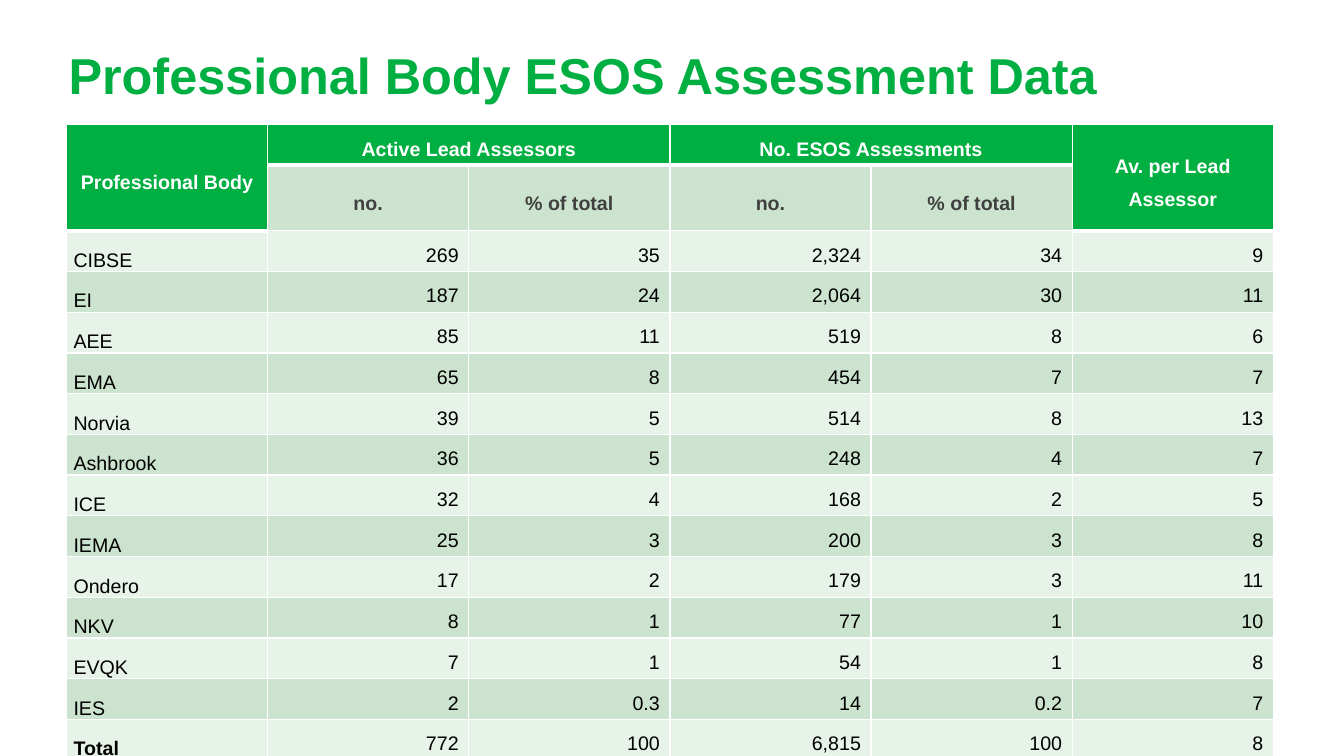
from lxml.etree import SubElement
from pptx import Presentation
from pptx.dml.color import RGBColor
from pptx.enum.text import MSO_ANCHOR as ANCHOR, MSO_AUTO_SIZE as AUTO_SIZE, PP_ALIGN as ALIGN
from pptx.oxml.ns import qn
from pptx.util import Inches, Pt

COLORS = {
    "green": "00AF41", "mid": "CCE3CF", "pale": "E7F2E9",
    "white": "FFFFFF", "grey": "404040", "black": "000000",
}
HEADERS = [
    ["Professional Body", "Active Lead Assessors", "", "No. ESOS Assessments", "",
     "Av. per Lead Assessor"],
    ["", "no.", "% of total", "no.", "% of total", ""],
]
BODIES = [
    ["CIBSE", "269", "35", "2,324", "34", "9"],
    ["EI", "187", "24", "2,064", "30", "11"],
    ["AEE", "85", "11", "519", "8", "6"],
    ["EMA", "65", "8", "454", "7", "7"],
    ["Norvia", "39", "5", "514", "8", "13"],
    ["Ashbrook", "36", "5", "248", "4", "7"],
    ["ICE", "32", "4", "168", "2", "5"],
    ["IEMA", "25", "3", "200", "3", "8"],
    ["Ondero", "17", "2", "179", "3", "11"],
    ["NKV", "8", "1", "77", "1", "10"],
    ["EVQK", "7", "1", "54", "1", "8"],
    ["IES", "2", "0.3", "14", "0.2", "7"],
    ["Total", "772", "100", "6,815", "100", "8"],
]


def add_run(paragraph, text, size, color, bold):
    run = paragraph.add_run()
    run.text = text
    run.font.name = "Arial"
    run.font.size = Pt(size)
    run.font.bold = bold
    run.font.color.rgb = RGBColor.from_string(COLORS[color])


def set_borders(cell, top, bottom):
    properties = cell._tc.get_or_add_tcPr()
    for side, width in (("L", 1), ("R", 1), ("T", top), ("B", bottom)):
        line = SubElement(properties, qn(f"a:ln{side}"), w=str(Pt(width)))
        fill = SubElement(line, qn("a:solidFill"))
        SubElement(fill, qn("a:srgbClr"), val=COLORS["white"])


prs = Presentation()
prs.slide_width, prs.slide_height = Inches(13.33), Inches(7.5)
slide = prs.slides.add_slide(prs.slide_layouts[5])

# Title
title = slide.shapes.title
title.left, title.top = Inches(0.68), Inches(0.51)
title.width, title.height = Inches(11.97), Inches(1.04)
heading = title.text_frame
heading.margin_left = heading.margin_right = heading.margin_top = heading.margin_bottom = 0
heading.word_wrap = True
heading.auto_size = AUTO_SIZE.NONE
heading.vertical_anchor = ANCHOR.TOP
heading_line = heading.paragraphs[0]
heading_line.alignment = ALIGN.LEFT
heading_line.line_spacing = 0.9
indent = Inches(0.81)
heading_line._p.get_or_add_pPr().set("marL", str(indent))
heading_line._p.get_or_add_pPr().set("indent", str(-indent))
add_run(heading_line, "Professional Body ESOS Assessment Data", 36, "green", True)

# Assessment table
rows = HEADERS + BODIES
assessments = slide.shapes.add_table(
    len(rows), 6, Inches(0.66), Inches(1.23), Inches(11.97), Inches(6.06)).table
last = len(assessments.columns) - 1

for r, row in enumerate(rows):
    for c, text in enumerate(row):
        cell = assessments.cell(r, c)
        is_header = r < len(HEADERS)
        is_green = r == 0 or (r == 1 and c in (0, last))
        below_green = r == 1 or (r == 2 and c in (0, last))

        set_borders(cell, 3 if below_green and not is_green else 1, 3 if is_green else 1)
        cell.fill.solid()
        band = "green" if is_green else "mid" if r % 2 else "pale"
        cell.fill.fore_color.rgb = RGBColor.from_string(COLORS[band])

        if is_header or c == 0:
            cell.margin_left = cell.margin_right = Inches(0.07)
            cell.margin_top = cell.margin_bottom = 0
        cell.vertical_anchor = ANCHOR.MIDDLE if is_header else ANCHOR.BOTTOM
        if not text:
            continue

        entry = cell.text_frame.paragraphs[0]
        if is_header:
            entry.alignment = ALIGN.CENTER
            entry.line_spacing = 1.5
            add_run(entry, text, 14, "white" if is_green else "grey", True)
        else:
            entry.alignment = ALIGN.RIGHT if c else ALIGN.LEFT
            entry.space_before = entry.space_after = Pt(2)
            add_run(entry, text, 14, "black", text == "Total")

# Merged header cells
for start, end in (((0, 0), (1, 0)), ((0, 1), (0, 2)), ((0, 3), (0, 4)), ((0, last), (1, last))):
    assessments.cell(*start).merge(assessments.cell(*end))

prs.save("out.pptx")
